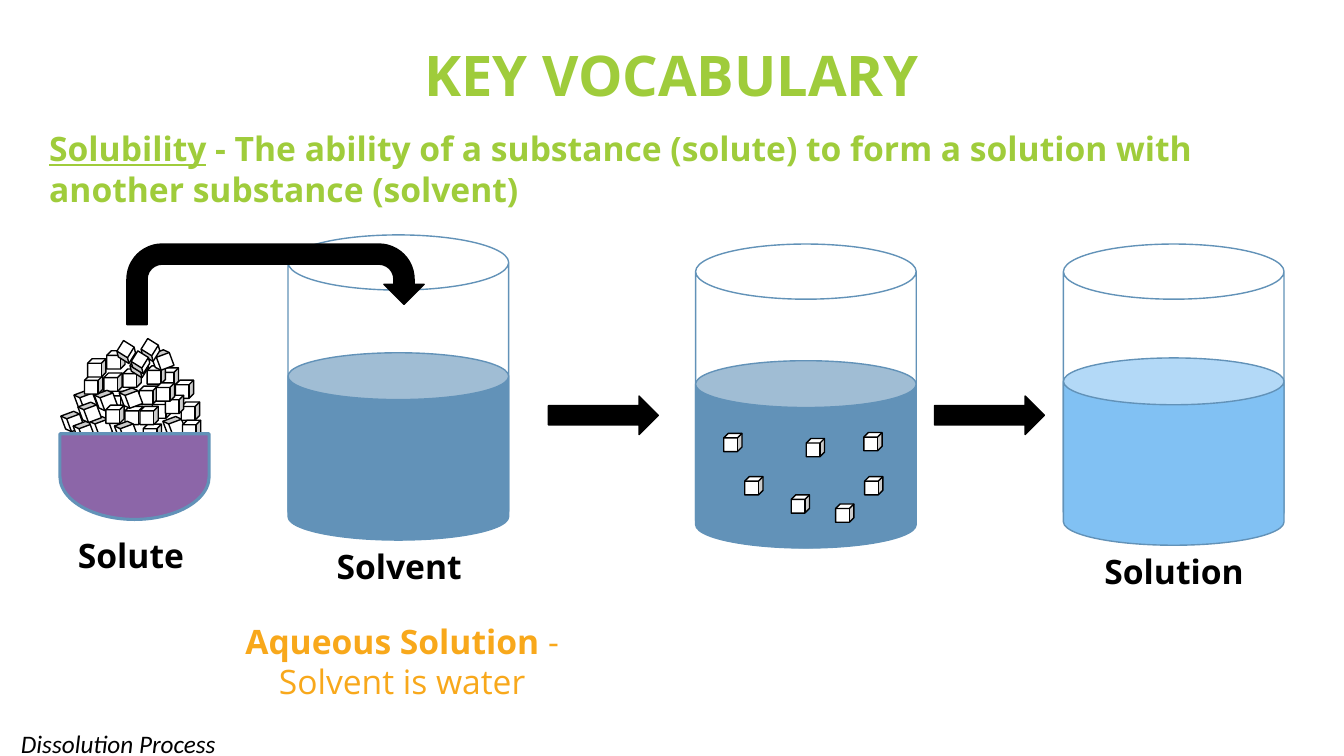
from dataclasses import dataclass

from pptx import Presentation
from pptx.dml.color import RGBColor
from pptx.enum.shapes import MSO_SHAPE
from pptx.enum.text import MSO_ANCHOR, PP_ALIGN
from pptx.util import Cm, Pt

CAN = MSO_SHAPE.CAN
CUBE = MSO_SHAPE.CUBE
BOWL = MSO_SHAPE.FLOWCHART_DELAY
RIGHT_ARROW = MSO_SHAPE.RIGHT_ARROW
UTURN_ARROW = MSO_SHAPE.U_TURN_ARROW
TOP, MIDDLE = MSO_ANCHOR.TOP, MSO_ANCHOR.MIDDLE
LEFT, CENTER = PP_ALIGN.LEFT, PP_ALIGN.CENTER


@dataclass(frozen=True)
class Theme:
    black: str = "000000"
    white: str = "FFFFFF"
    green: str = "9FCC3B"
    orange: str = "F8A81B"
    solvent: str = "6292B8"
    solution: str = "81C1F3"
    bowl: str = "8C66A8"
    heading_font: str = "Open Sans"
    caption_font: str = "Calibri"
    title_size: int = 40
    body_size: int = 24
    caption_size: int = 18
    thin: float = 1
    thick: float = 2.25


class Diagram:
    def __init__(self, slide, theme):
        self.slide = slide
        self.theme = theme

    def text(self, box, runs, color, size=None, font=None, align=CENTER,
             anchor=MIDDLE, inset=0.33, italic=False):
        shape = self.slide.shapes.add_textbox(*map(Cm, box))
        frame = shape.text_frame
        frame.word_wrap = True
        frame.vertical_anchor = anchor
        frame.margin_left = frame.margin_right = Cm(inset)
        frame.margin_top = frame.margin_bottom = Cm(inset)
        paragraph = frame.paragraphs[0]
        paragraph.alignment = align
        paragraph.font.name = font or self.theme.heading_font
        paragraph.font.size = Pt(size or self.theme.body_size)
        paragraph.font.color.rgb = RGBColor.from_string(color)
        paragraph.font.italic = italic
        for content, bold, underline in runs:
            run = paragraph.add_run()
            run.text = content
            run.font.bold = bold
            run.font.underline = underline

    def shape(self, kind, box, fill, line, width=None, angle=0, parent=None):
        shapes = (parent or self.slide).shapes
        shape = shapes.add_shape(kind, *map(Cm, box))
        shape.shadow.inherit = False
        shape.rotation = angle
        if fill:
            shape.fill.solid()
            shape.fill.fore_color.rgb = RGBColor.from_string(fill)
        else:
            shape.fill.background()
        shape.line.color.rgb = RGBColor.from_string(line)
        shape.line.width = Pt(width or self.theme.thin)

    def group(self):
        return self.slide.shapes.add_group_shape()

    def beaker(self, left, top, height, liquid_top, liquid):
        beaker = self.group()
        outline = self.theme.solvent
        self.shape(CAN, (left, top, 5.56, height), None, outline, parent=beaker)
        self.shape(CAN, (left, liquid_top, 5.56, 4.72), liquid, outline, parent=beaker)

    def arrow(self, kind, box):
        self.shape(kind, box, self.theme.black, self.theme.black)

    def cubes(self, positions, angle=0, size=0.46, parent=None):
        for left, top in positions:
            self.shape(CUBE, (left, top, size, size), self.theme.white,
                       self.theme.black, angle=angle, parent=parent)

    def label(self, left, top, content):
        self.text((left, top, 4.98, 2.26), [(content, True, False)], self.theme.black)


UPRIGHT, TILTED, TOPPLED = 0, 249.7, 121.9
SUGAR_LAYERS = [
    (UPRIGHT, 0.46, [(4.04, 9.27), (4.42, 9.58), (3.1, 9.3), (3.51, 9.73), (2.69, 9.86),
                     (3.15, 10.24), (3.61, 10.69), (2.62, 9.4), (3.84, 10.08)]),
    (TILTED, 0.46, [(1.6, 10.39), (1.91, 10.64), (3.07, 9.8), (2.95, 10.64), (1.93, 9.86),
                    (2.44, 9.86), (2.31, 10.52), (2.03, 10.16), (4.17, 10.52)]),
    (UPRIGHT, 0.46, [(2.13, 9.47), (2.67, 10.21), (4.57, 10.13), (2.21, 9.04),
                     (2.69, 8.84), (3.71, 9.22), (4.17, 9.96), (4.6, 10.59)]),
    (TILTED, 0.46, [(3.86, 8.84)]),
    (TOPPLED, 0.42, [(3.58, 8.61), (2.97, 8.66), (3.3, 9.02), (3.33, 8.92)]),
    (UPRIGHT, 0.46, [(3.53, 10.24), (3.94, 9.65)]),
]
DISSOLVING_CUBES = [(18.24, 10.92), (18.77, 12.01), (20.32, 11.05), (19.94, 12.47),
                    (21.79, 12.01), (21.77, 10.9), (21.06, 12.7)]


def main():
    presentation = Presentation()
    presentation.slide_width = Cm(33.87)
    presentation.slide_height = Cm(19.05)
    slide = presentation.slides.add_slide(presentation.slide_layouts[6])
    theme = Theme()
    diagram = Diagram(slide, theme)

    diagram.text((0.91, 0.69, 32.03, 2.51), [("KEY VOCABULARY", True, False)],
                 theme.green, size=theme.title_size, anchor=TOP)
    diagram.text((0.91, 2.9, 32.03, 3.33),
                 [("Solubility", True, True),
                  (" - The ability of a substance (solute) to form a solution with "
                   "another substance (solvent)", True, False)],
                 theme.green, align=LEFT, anchor=TOP)
    diagram.text((4.57, 15.52, 11.13, 2.26),
                 [("Aqueous Solution", True, False), (" - Solvent is water", False, False)],
                 theme.orange)

    diagram.beaker(7.26, 5.92, 7.65, 8.89, theme.solvent)
    diagram.beaker(17.53, 6.15, 7.65, 9.09, theme.solvent)
    diagram.beaker(26.8, 6.15, 7.44, 9.02, theme.solution)

    diagram.arrow(UTURN_ARROW, (3.2, 6.15, 7.49, 2.03))
    for left in (13.82, 23.55):
        diagram.arrow(RIGHT_ARROW, (left, 9.98, 2.77, 0.97))

    sugar_bowl = diagram.group()
    for angle, size, positions in SUGAR_LAYERS:
        diagram.cubes(positions, angle, size, sugar_bowl)
    diagram.shape(BOWL, (2.31, 10.13, 2.16, 3.76), theme.bowl, theme.solvent,
                  theme.thick, 90, sugar_bowl)
    diagram.cubes(DISSOLVING_CUBES)

    diagram.label(0.81, 12.85, "Solute")
    diagram.label(7.57, 13.13, "Solvent")
    diagram.label(27.1, 13.26, "Solution")
    diagram.text((0.28, 18.36, 13.34, 0.76), [("Dissolution Process", False, False)],
                 theme.black, theme.caption_size, theme.caption_font, LEFT,
                 inset=0.25, italic=True)

    presentation.save("out.pptx")


if __name__ == "__main__":
    main()
